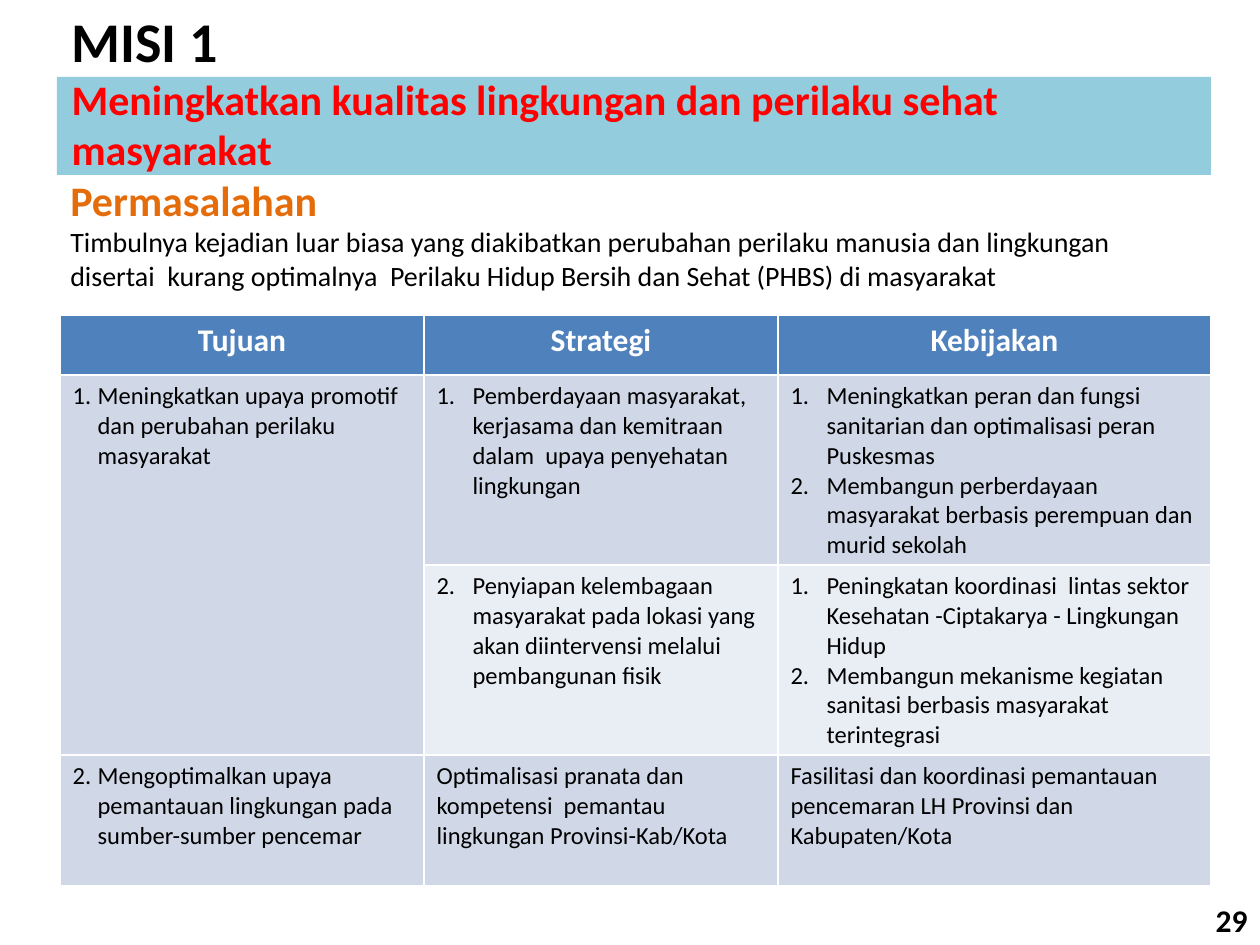
from lxml import etree
from pptx import Presentation
from pptx.dml.color import RGBColor
from pptx.enum.shapes import MSO_SHAPE
from pptx.enum.text import MSO_ANCHOR, MSO_AUTO_SIZE, PP_ALIGN
from pptx.oxml.ns import qn
from pptx.util import Emu, Pt

RECT = MSO_SHAPE.RECTANGLE
TOP = MSO_ANCHOR.TOP
GROW = MSO_AUTO_SIZE.SHAPE_TO_FIT_TEXT
LEFT, CENTER, RIGHT = PP_ALIGN.LEFT, PP_ALIGN.CENTER, PP_ALIGN.RIGHT
JUSTIFY = PP_ALIGN.JUSTIFY

FONT = "Calibri"
COLORS = {
    "black": "000000", "white": "FFFFFF", "red": "FF0000", "orange": "E46C0A",
    "band": "93CDDD", "header": "4F81BD", "dark row": "D0D8E8", "light row": "E9EDF4",
}


def px(n):
    return Emu(round(n * 914400 / 126))


def rgb(name):
    return RGBColor.from_string(COLORS[name])


class Deck:
    def __init__(self, width, height):
        self.prs = Presentation()
        self.prs.slide_width, self.prs.slide_height = px(width), px(height)
        self.s = None

    def add_slide(self, layout):
        self.s = self.prs.slides.add_slide(self.prs.slide_layouts[layout])

    def style_text(self, p, text, size, color="black", bold=False, align=LEFT):
        p.text = text
        p.alignment = align
        for r in p.runs:
            r.font.name, r.font.size, r.font.bold = FONT, Pt(size), bold
            r.font.color.rgb = rgb(color)

    def number(self, p, start, indent):
        pPr = p._p.get_or_add_pPr()
        pPr.set("marL", str(px(indent)))
        pPr.set("indent", str(-px(indent)))
        bullet = etree.SubElement(pPr, qn("a:buAutoNum"), type="arabicPeriod")
        if start > 1:
            bullet.set("startAt", str(start))

    def fill_text(self, sp, lines):
        tf = sp.text_frame
        tf.word_wrap, tf.auto_size, tf.vertical_anchor = True, GROW, TOP
        for i, line in enumerate(lines):
            p = tf.add_paragraph() if i else tf.paragraphs[0]
            self.style_text(p, *line)

    def rect(self, x, y, w, h, color):
        sp = self.s.shapes.add_shape(RECT, px(x), px(y), px(w), px(h))
        sp.shadow.inherit = False
        sp.fill.solid()
        sp.fill.fore_color.rgb = rgb(color)
        sp.line.fill.background()

    def title(self, x, y, w, h, lines):
        sp = self.s.shapes.title
        sp.left, sp.top, sp.width, sp.height = px(x), px(y), px(w), px(h)
        self.fill_text(sp, lines)
        # Bring the title in front of the band
        sp.element.getparent().append(sp.element)

    def text(self, x, y, w, h, lines):
        sp = self.s.shapes.add_textbox(px(x), px(y), px(w), px(h))
        self.fill_text(sp, lines)

    def cell(self, cell, color, items, start=0, indent=0):
        cell.fill.solid()
        cell.fill.fore_color.rgb = rgb(color)
        tf = cell.text_frame
        for i, item in enumerate(items):
            p = tf.add_paragraph() if i else tf.paragraphs[0]
            self.style_text(p, item, 14)
            if start:
                self.number(p, start, indent)

    def table(self, x, y, cols, rows, header, body, merges):
        frame = self.s.shapes.add_table(len(rows), len(cols), px(x), px(y),
                                        px(sum(cols)), px(sum(rows)))
        tbl = frame.table
        for col, w in zip(tbl.columns, cols):
            col.width = px(w)
        for row, h in zip(tbl.rows, rows):
            row.height = px(h)
        for first, last in merges:
            tbl.cell(*first).merge(tbl.cell(*last))
        for c, label in enumerate(header):
            cell = tbl.cell(0, c)
            cell.fill.solid()
            cell.fill.fore_color.rgb = rgb("header")
            p = cell.text_frame.paragraphs[0]
            self.style_text(p, label, 18, "white", True, CENTER)
        for r, row in enumerate(body, 1):
            color = "dark row" if r % 2 else "light row"
            for c, content in enumerate(row):
                if content:
                    self.cell(tbl.cell(r, c), color, *content)


# Table content: (paragraphs, first number, indent)
GOAL, ITEM = 25, 36
HEADER = ["Tujuan", "Strategi", "Kebijakan"]
BODY = [
    [(["Meningkatkan upaya promotif dan perubahan perilaku masyarakat"], 1, GOAL),
     (["Pemberdayaan masyarakat, kerjasama dan kemitraan dalam  upaya "
       "penyehatan lingkungan"], 1, ITEM),
     (["Meningkatkan peran dan fungsi sanitarian dan optimalisasi peran Puskesmas",
       "Membangun perberdayaan masyarakat berbasis perempuan dan murid sekolah"],
      1, ITEM)],
    [None,
     (["Penyiapan kelembagaan masyarakat pada lokasi yang akan diintervensi "
       "melalui pembangunan fisik"], 2, ITEM),
     (["Peningkatan koordinasi  lintas sektor Kesehatan -Ciptakarya - "
       "Lingkungan Hidup",
       "Membangun mekanisme kegiatan sanitasi berbasis masyarakat terintegrasi"],
      1, ITEM)],
    [(["Mengoptimalkan upaya pemantauan lingkungan pada sumber-sumber pencemar"],
      2, GOAL),
     (["Optimalisasi pranata dan kompetensi  pemantau lingkungan "
       "Provinsi-Kab/Kota"],),
     (["Fasilitasi dan koordinasi pemantauan pencemaran LH Provinsi dan "
       "Kabupaten/Kota"],)],
]


def main():
    deck = Deck(1260, 945)
    deck.add_slide(5)

    # Mission heading on its band
    deck.rect(57, 77, 1154, 98, "band")
    deck.title(59, 0, 1113, 183, [
        ("MISI 1", 32, "black", True, JUSTIFY),
        ("Meningkatkan kualitas lingkungan dan perilaku sehat masyarakat",
         24, "red", True),
    ])

    # Problem statement
    deck.text(58, 168, 1134, 131, [
        ("Permasalahan", 24, "orange", True),
        ("Timbulnya kejadian luar biasa yang diakibatkan perubahan perilaku manusia "
         "dan lingkungan disertai  kurang optimalnya  Perilaku Hidup Bersih dan "
         "Sehat (PHBS) di masyarakat", 16),
    ])

    # Goals, strategies and policies
    deck.table(60, 315, [364, 354, 433], [60, 190, 190, 131], HEADER, BODY,
               merges=[((1, 0), (2, 0))])

    # Page number
    deck.text(1166, 895, 94, 50, [("29", 18, "black", True, RIGHT)])

    deck.prs.save("out.pptx")


if __name__ == "__main__":
    main()
